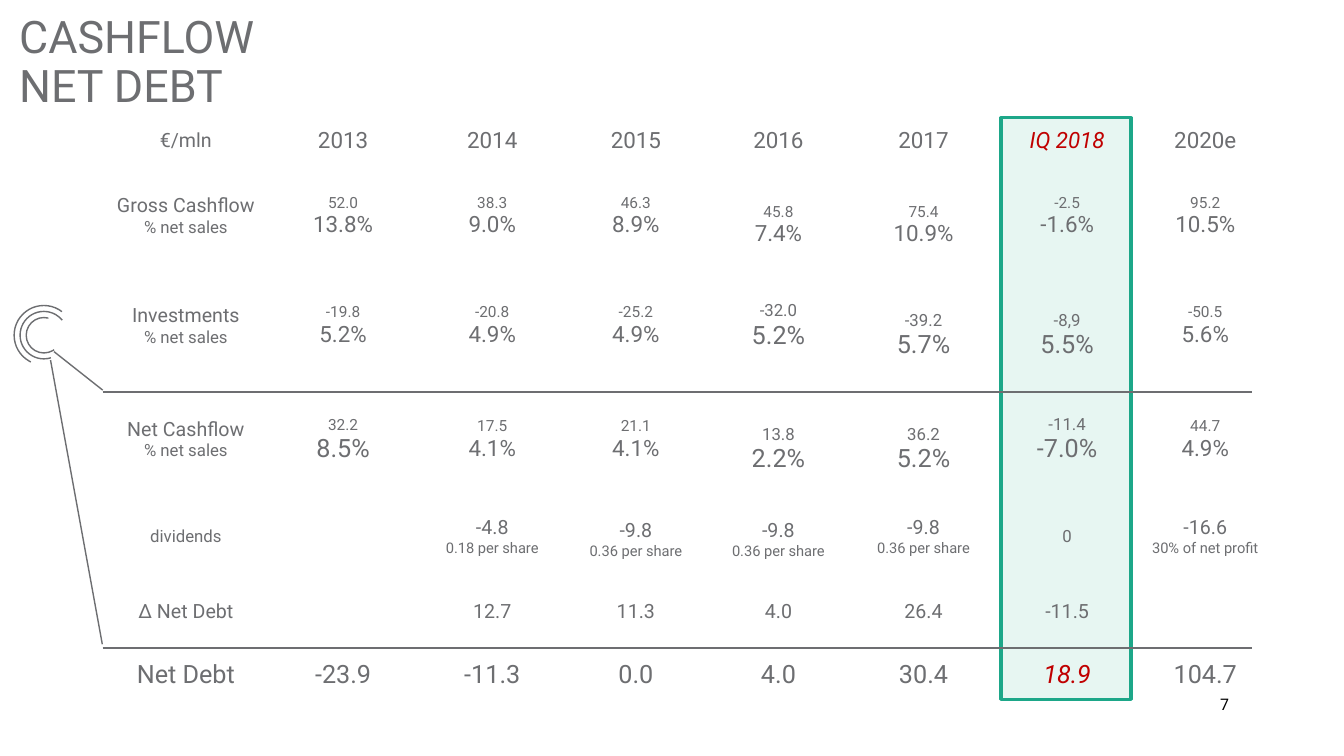
from lxml import etree
from pptx import Presentation
from pptx.dml.color import RGBColor
from pptx.enum.shapes import MSO_CONNECTOR, MSO_SHAPE
from pptx.enum.text import MSO_ANCHOR, MSO_AUTO_SIZE, PP_ALIGN
from pptx.oxml.ns import qn
from pptx.util import Pt

STRAIGHT = MSO_CONNECTOR.STRAIGHT
RECTANGLE, ARC = MSO_SHAPE.RECTANGLE, MSO_SHAPE.ARC
TOP, MIDDLE = MSO_ANCHOR.TOP, MSO_ANCHOR.MIDDLE
NO_AUTOFIT = MSO_AUTO_SIZE.NONE
LEFT, CENTER, RIGHT = PP_ALIGN.LEFT, PP_ALIGN.CENTER, PP_ALIGN.RIGHT

COLORS = {"text": "6D6E71", "accent": "1DA789", "alert": "C00000", "number": "000000"}
FONT = "Roboto"
PLAIN_TABLE_STYLE = "{2D5ABB26-0587-4C30-8999-92F81FD0307C}"

COLUMN_WIDTHS = [118.8, 105.8, 107.3, 97.9, 105.8, 101.5, 103.7, 93.6]
ROW_HEIGHTS = [38.9, 67.7, 89.3, 73.4, 65.5, 41, 49.7]
DIVIDEND_ROW = 4
ROWS = [
    ["€/mln", "2013", "2014", "2015", "2016", "2017", "IQ 2018", "2020e"],
    ["Gross Cashflow|% net sales", "52.0|13.8%", "38.3|9.0%", "46.3|8.9%",
     "45.8|7.4%", "75.4|10.9%", "-2.5|-1.6%", "95.2|10.5%"],
    ["Investments|% net sales", "-19.8|5.2%", "-20.8|4.9%", "-25.2|4.9%",
     "-32.0|5.2%", "-39.2|5.7%", "-8,9|5.5%", "-50.5|5.6%"],
    ["Net Cashflow|% net sales", "32.2|8.5%", "17.5|4.1%", "21.1|4.1%",
     "13.8|2.2%", "36.2|5.2%", "-11.4|-7.0%", "44.7|4.9%"],
    ["dividends", "", "-4.8|0.18 per share", "-9.8|0.36 per share",
     "-9.8|0.36 per share", "-9.8|0.36 per share", "0", "-16.6|30% of net profit"],
    ["Δ Net Debt", "", "12.7", "11.3", "4.0", "26.4", "-11.5", ""],
    ["Net Debt", "-23.9", "-11.3", "0.0", "4.0", "30.4", "18.9", "104.7"],
]
LABEL_SIZES = [(14,), (14, 12), (14, 12), (14, 12), (12,), (14,), (18,)]
VALUE_SIZES = [(16,), (11, 16), (11, 16), (11, 16), (14, 10.5), (14,), (18,)]
SPECIAL_SIZES = {
    (2, 4): (12, 18), (2, 5): (12, 18), (2, 6): (12, 18),
    (3, 1): (11, 18), (3, 4): (12, 18), (3, 5): (12, 18), (3, 6): (12, 18),
    (4, 6): (12,),
}
EXTRA_TOP = {(1, 4): 13, (1, 5): 13, (2, 5): 14, (2, 6): 14,
             (3, 4): 14, (3, 5): 14, (4, 3): 4, (4, 4): 4}
ALERT_CELLS = {(0, 6), (6, 6)}


def color(name):
    """Return a named palette colour."""
    return RGBColor.from_string(COLORS[name])


def write_lines(text_frame, lines, alignment, color_name="text", italic=False, spacing=None):
    """Write (text, size) pairs as one paragraph each."""
    for index, (text, size) in enumerate(lines):
        paragraph = text_frame.add_paragraph() if index else text_frame.paragraphs[0]
        paragraph.alignment = alignment
        paragraph.line_spacing = spacing
        run = paragraph.add_run()
        run.text = text
        run.font.name = FONT
        run.font.size = Pt(size)
        run.font.italic = italic
        run.font.color.rgb = color(color_name)


def add_line(slide, start, end):
    """Draw a thin grey line between two points."""
    line = slide.shapes.add_connector(STRAIGHT, *map(Pt, start + end))
    line.line.color.rgb = color("text")
    line.line.width = Pt(1)
    etree.SubElement(line._element.spPr, qn("a:effectLst"))


def add_title(slide, left, top, width, height):
    """Place the two-line heading."""
    title = slide.shapes.title
    title.left, title.top, title.width, title.height = map(Pt, (left, top, width, height))
    text_frame = title.text_frame
    text_frame.auto_size = NO_AUTOFIT
    text_frame.vertical_anchor = TOP
    write_lines(text_frame, [("CASHFLOW", 32), ("NET DEBT", 32)], LEFT, spacing=0.9)


def add_page_number(slide, left, top, width, height):
    """Place the page number flush right."""
    text_frame = slide.shapes.add_textbox(*map(Pt, (left, top, width, height))).text_frame
    text_frame.word_wrap = True
    text_frame.margin_left = text_frame.margin_right = 0
    text_frame.margin_top = text_frame.margin_bottom = 0
    write_lines(text_frame, [("7", 11.4)], RIGHT, "number")


def add_highlight(slide, left, top, width, height):
    """Frame the current quarter with a translucent box."""
    shape = slide.shapes.add_shape(RECTANGLE, *map(Pt, (left, top, width, height)))
    shape.shadow.inherit = False
    shape.fill.solid()
    shape.fill.fore_color.rgb = color("accent")
    fill_color = shape._element.spPr.find(qn("a:solidFill"))[0]
    etree.SubElement(fill_color, qn("a:alpha"), val="10000")
    shape.line.color.rgb = color("accent")
    shape.line.width = Pt(2.25)


def add_cashflow_table(slide, left, top):
    """Build the cashflow table and its two separating rules."""
    width, height = sum(COLUMN_WIDTHS), sum(ROW_HEIGHTS)
    frame = slide.shapes.add_table(len(ROWS), len(COLUMN_WIDTHS),
                                   *map(Pt, (left, top, width, height)))
    table = frame.table
    table.first_row = table.horz_banding = False
    table._tbl.tblPr.find(qn("a:tableStyleId")).text = PLAIN_TABLE_STYLE
    for column, column_width in zip(table.columns, COLUMN_WIDTHS):
        column.width = Pt(column_width)
    for row, (texts, row_height) in enumerate(zip(ROWS, ROW_HEIGHTS)):
        table.rows[row].height = Pt(row_height)
        padding = 0 if row == DIVIDEND_ROW else 8
        for column, text in enumerate(texts):
            place = (row, column)
            cell = table.cell(row, column)
            cell.fill.background()
            cell.vertical_anchor = MIDDLE
            cell.margin_left = cell.margin_right = Pt(6)
            cell.margin_top = Pt(padding + EXTRA_TOP.get(place, 0))
            cell.margin_bottom = Pt(padding)
            if text:
                sizes = SPECIAL_SIZES.get(place, (VALUE_SIZES if column else LABEL_SIZES)[row])
                alert = place in ALERT_CELLS
                write_lines(cell.text_frame, list(zip(text.split("|"), sizes)), CENTER,
                            "alert" if alert else "text", alert)
    for offset in (198.7, 381.6):
        add_line(slide, (left, top + offset), (left + 821, top + offset))


def add_arc_marker(slide, left, top, size):
    """Draw concentric arcs with lines leading to the two rules."""
    arcs = [(0, 115.97, 307.5), (4.3, 72.69, 320.98), (8.6, 54.77, 284.46)]
    for inset, start, end in arcs:
        diameter = size - 2 * inset
        arc = slide.shapes.add_shape(
            ARC, *map(Pt, (left + inset, top + inset, diameter, diameter)))
        arc.shadow.inherit = False
        arc.fill.background()
        arc.line.color.rgb = color("text")
        arc.line.width = Pt(1)
        arc.adjustments[0] = start * 0.6
        arc.adjustments[1] = end * 0.6
    add_line(slide, (left + 63, top + 242), (left + 26, top + 39))
    add_line(slide, (left + 63.3, top + 60.5), (left + 28.5, top + 33))


def main():
    """Build and save the slide."""
    presentation = Presentation()
    presentation.slide_width, presentation.slide_height = Pt(960), Pt(540)
    slide = presentation.slides.add_slide(presentation.slide_layouts[5])
    add_page_number(slide, 809.3, 496, 68.6, 43.9)
    add_highlight(slide, 715, 84.2, 92.9, 415.4)
    add_cashflow_table(slide, 73.4, 81.4)
    add_title(slide, 6.5, 7.2, 611.3, 75)
    add_arc_marker(slide, 10.1, 218.2, 42.5)
    presentation.save("out.pptx")


if __name__ == "__main__":
    main()
